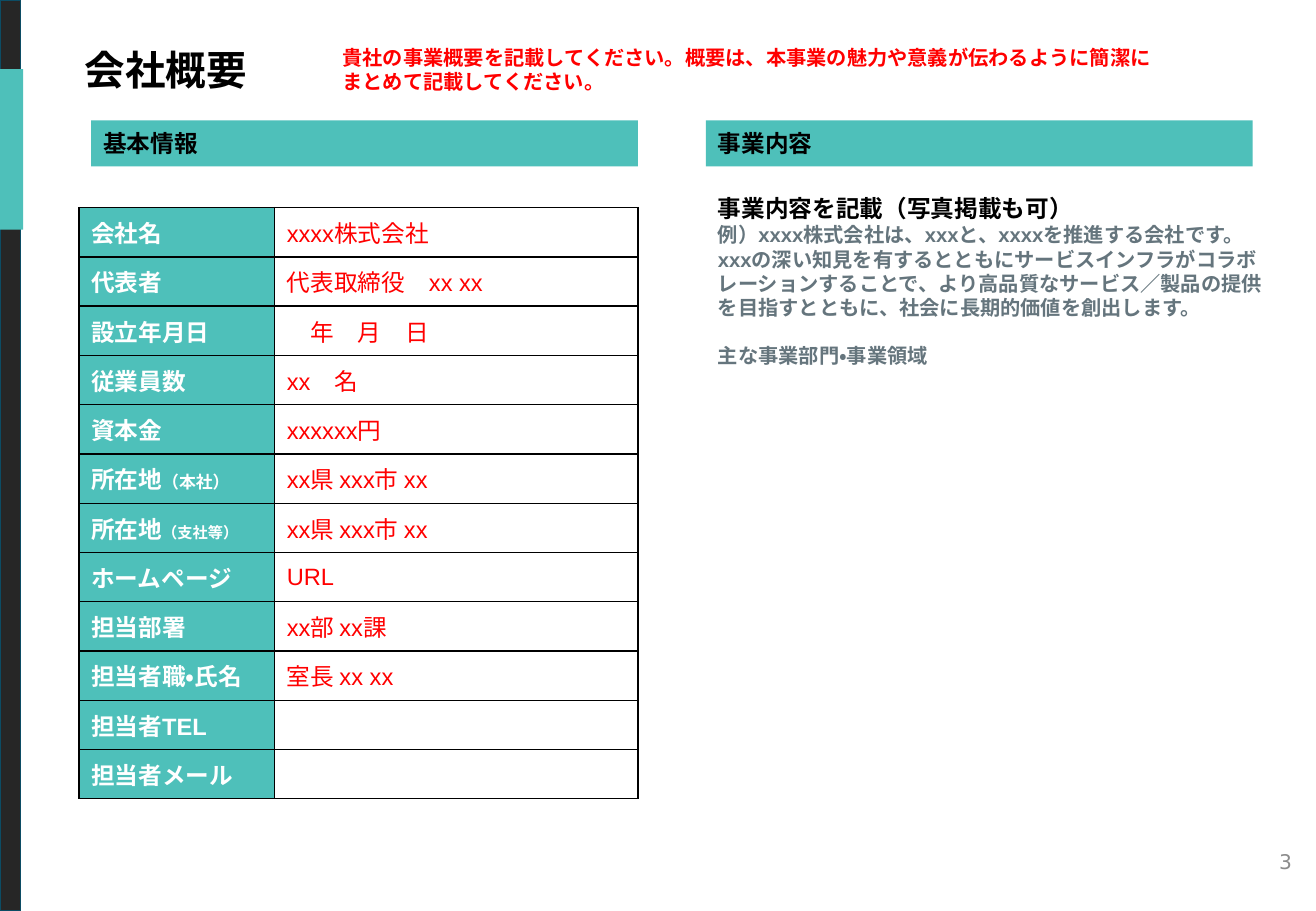
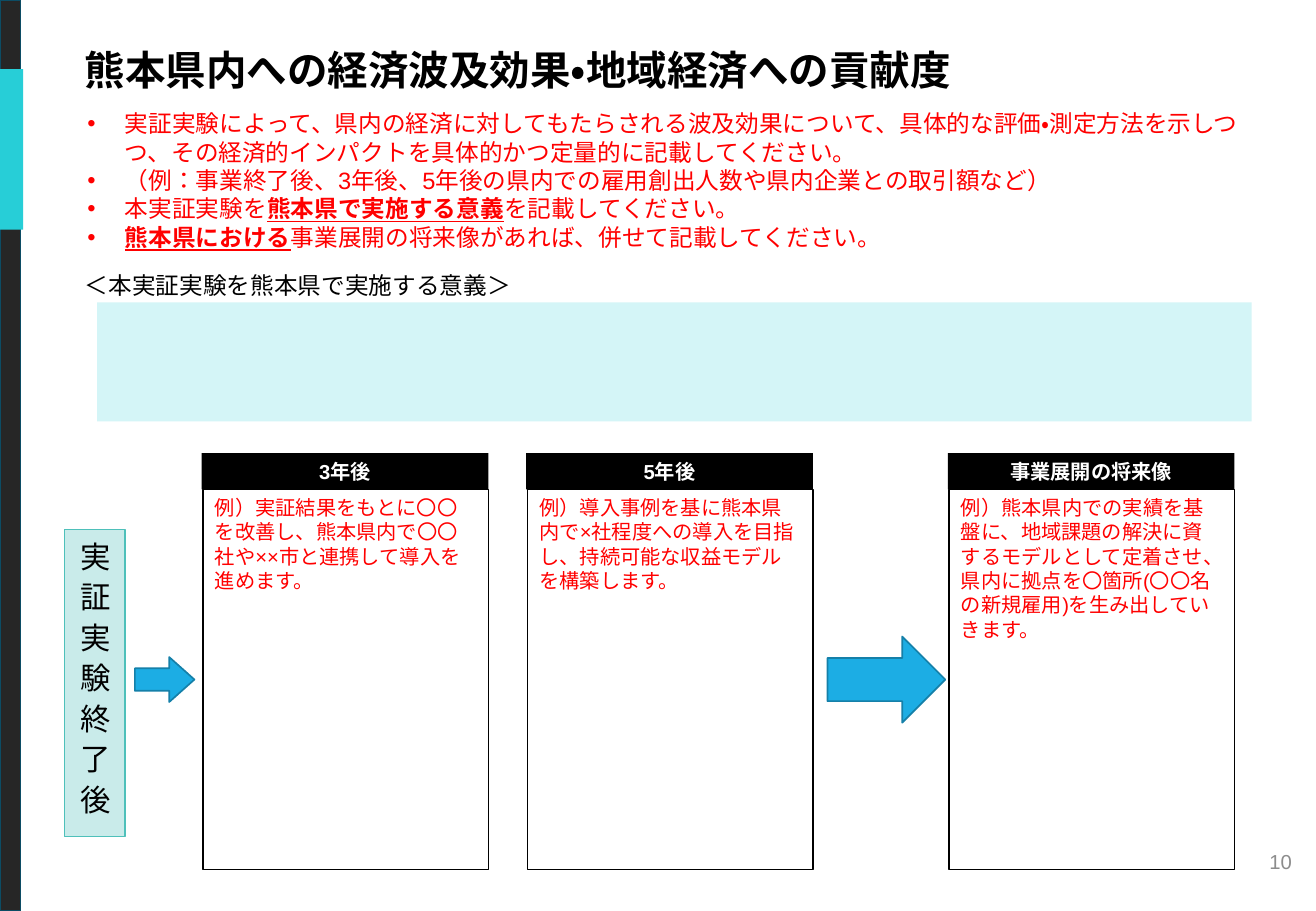
from lxml.etree import SubElement
from pptx import Presentation
from pptx.dml.color import RGBColor
from pptx.enum.lang import MSO_LANGUAGE_ID as Language
from pptx.enum.shapes import MSO_SHAPE as Shape
from pptx.enum.text import MSO_ANCHOR as Anchor, PP_ALIGN as Align
from pptx.oxml.ns import qn
from pptx.util import Inches, Pt

COLORS = {
    "black": "000000", "white": "FFFFFF", "red": "FF0000", "teal": "4EC0BA",
    "cyan": "27CED7", "pale": "D4F5F7", "band": "262626", "band_line": "0C4C64",
    "slate": "65757D", "number": "8C8C8C", "arrow": "1CADE4", "arrow_line": "1580A9",
}
FONT = "Arial"


def add_box(slide, kind, bounds, fill=None, line=None, line_width=1):
    shape = slide.shapes.add_shape(kind, *map(Inches, bounds))
    shape.shadow.inherit = False
    if fill:
        shape.fill.solid()
        shape.fill.fore_color.rgb = RGBColor.from_string(COLORS[fill])
    else:
        shape.fill.background()
    if line:
        shape.line.color.rgb = RGBColor.from_string(COLORS[line])
        shape.line.width = Pt(line_width)
    else:
        shape.line.fill.background()
    return shape


def write(frame, paragraphs, size, color, bold=False, align=Align.LEFT, anchor=Anchor.TOP, font=FONT):
    frame.word_wrap = True
    frame.vertical_anchor = anchor
    for index, runs in enumerate(paragraphs):
        paragraph = frame.paragraphs[0] if index == 0 else frame.add_paragraph()
        paragraph.alignment = align
        for text, changes in runs:
            style = {"size": size, "color": color, "bold": bold, "underline": False} | changes
            run = paragraph.add_run()
            run.text = text
            run.font.name = font
            run.font.language_id = Language.JAPANESE
            run.font.size = Pt(style["size"])
            run.font.bold = style["bold"]
            run.font.underline = style["underline"]
            run.font.color.rgb = RGBColor.from_string(COLORS[style["color"]])


presentation = Presentation()
presentation.slide_width = Inches(10.83)
presentation.slide_height = Inches(7.5)

slides = []
for title, number, tab_color, number_font in [
    ("会社概要", "3", "teal", "DejaVu Sans"),
    ("熊本県内への経済波及効果・地域経済への貢献度", "10", "cyan", FONT),
]:
    slide = presentation.slides.add_slide(presentation.slide_layouts[6])
    add_box(slide, Shape.RECTANGLE, (0, 0, 0.17, 7.5), "band", "band_line")
    add_box(slide, Shape.RECTANGLE, (0, 0.57, 0.19, 1.32), tab_color)
    title_box = slide.shapes.add_textbox(Inches(0.6), Inches(0.32), Inches(9.95), Inches(0.5))
    write(title_box.text_frame, [[(title, {})]], 24, "black", True)
    number_box = slide.shapes.add_textbox(Inches(8.29), Inches(6.89), Inches(2.44), Inches(0.4))
    write(number_box.text_frame, [[(number, {})]], 12, "number", align=Align.RIGHT,
          anchor=Anchor.MIDDLE, font=number_font)
    slides.append(slide)
company_slide, impact_slide = slides

for left, heading in [(0.75, "基本情報"), (5.81, "事業内容")]:
    heading_bar = add_box(company_slide, Shape.RECTANGLE, (left, 0.99, 4.5, 0.38), "teal")
    write(heading_bar.text_frame, [[(heading, {})]], 14, "black", True, anchor=Anchor.MIDDLE)

guidance = company_slide.shapes.add_textbox(Inches(2.72), Inches(0.32), Inches(7.59), Inches(0.5))
write(guidance.text_frame, [
    [("貴社の事業概要を記載してください。概要は、本事業の魅力や意義が伝わるように簡潔に", {})],
    [("まとめて記載してください。", {})],
], 12, "red", True)

business = company_slide.shapes.add_textbox(Inches(5.81), Inches(1.55), Inches(4.76), Inches(1.55))
write(business.text_frame, [
    [("事業内容を記載（写真掲載も可）", {"size": 14, "color": "black"})],
    [("例）xxxx株式会社は、xxxと、xxxxを推進する会社です。", {})],
    [("xxxの深い知見を有するとともにサービスインフラがコラボレーションすることで、"
      "より高品質なサービス／製品の提供を目指すとともに、社会に長期的価値を創出します。", {})],
    [("主な事業部門・事業領域", {})],
], 12, "slate", True)
business.text_frame.paragraphs[-1].space_before = Pt(14.2)

company_rows = [
    ("会社名", "", 14, "xxxx株式会社"),
    ("代表者", "", 14, "代表取締役　xx xx"),
    ("設立年月日", "", 14, "　年　月　日"),
    ("従業員数", "", 14, "xx　名"),
    ("資本金", "", 14, "xxxxxx円"),
    ("所在地", "（本社）", 10, "xx県 xxx市 xx"),
    ("所在地", "（支社等）", 9, "xx県 xxx市 xx"),
    ("ホームページ", "", 14, "URL"),
    ("担当部署", "", 14, "xx部 xx課"),
    ("担当者職・氏名", "", 14, "室長 xx xx"),
    ("担当者TEL", "", 14, ""),
    ("担当者メール", "", 14, ""),
]
table = company_slide.shapes.add_table(
    len(company_rows), 2, Inches(0.65), Inches(1.71), Inches(4.6), Inches(4.87)).table
table.first_row = False
table.horz_banding = False
table.columns[0].width = Inches(1.61)
table.columns[1].width = Inches(2.99)
for row, (label, note, note_size, value) in enumerate(company_rows):
    label_runs = [(label, {})] + ([(note, {"size": note_size})] if note else [])
    value_runs = [(value, {})] if value else []
    for column, (runs, color) in enumerate([(label_runs, "white"), (value_runs, "red")]):
        cell = table.cell(row, column)
        write(cell.text_frame, [runs], 14, color, column == 0)
        cell.vertical_anchor = Anchor.MIDDLE
        properties = cell._tc.get_or_add_tcPr()
        for side in ("a:lnL", "a:lnR", "a:lnT", "a:lnB"):
            border = SubElement(properties, qn(side), w=str(Pt(1)))
            SubElement(SubElement(border, qn("a:solidFill")), qn("a:srgbClr"), val=COLORS["black"])
        if column == 0:
            cell.fill.solid()
            cell.fill.fore_color.rgb = RGBColor.from_string(COLORS["teal"])
        else:
            cell.fill.background()

emphasis = {"bold": True, "underline": True}
instructions = impact_slide.shapes.add_textbox(Inches(0.62), Inches(0.85), Inches(9.73), Inches(1.51))
write(instructions.text_frame, [
    [("実証実験によって、県内の経済に対してもたらされる波及効果について、具体的な評価・測定方法を示しつつ、"
      "その経済的インパクトを具体的かつ定量的に記載してください。", {})],
    [("（例：事業終了後、3年後、5年後の県内での雇用創出人数や県内企業との取引額など）", {})],
    [("本実証実験を", {}), ("熊本県で実施する意義", emphasis), ("を記載してください。", {})],
    [("熊本県における", emphasis), ("事業展開の将来像があれば、併せて記載してください。", {})],
], 14, "red")
for paragraph in instructions.text_frame.paragraphs:
    properties = paragraph._p.get_or_add_pPr()
    properties.set("marL", str(Inches(0.31)))
    properties.set("indent", str(Inches(-0.31)))
    SubElement(properties, qn("a:buFont"), typeface=FONT)
    SubElement(properties, qn("a:buChar"), char="•")

significance = impact_slide.shapes.add_textbox(Inches(0.6), Inches(2.18), Inches(4.67), Inches(0.34))
write(significance.text_frame, [[("＜本実証実験を熊本県で実施する意義＞", {})]], 14, "black")
add_box(impact_slide, Shape.RECTANGLE, (0.8, 2.49, 9.5, 0.98), "pale")

for left, heading, example in [
    (1.66, "3年後", "例）実証結果をもとに〇〇を改善し、熊本県内で〇〇社や××市と連携して導入を進めます。"),
    (4.33, "5年後", "例）導入事例を基に熊本県内で×社程度への導入を目指し、持続可能な収益モデルを構築します。"),
    (7.8, "事業展開の将来像", "例）熊本県内での実績を基盤に、地域課題の解決に資するモデルとして定着させ、"
     "県内に拠点を〇箇所(〇〇名の新規雇用)を生み出していきます。"),
]:
    stage_body = add_box(impact_slide, Shape.RECTANGLE, (left + 0.01, 4.03, 2.35, 3.13), line="black")
    write(stage_body.text_frame, [[(example, {})]], 12, "red")
    stage_heading = add_box(impact_slide, Shape.RECTANGLE, (left, 3.73, 2.36, 0.3), "black")
    write(stage_heading.text_frame, [[(heading, {})]], 12, "white", True, Align.CENTER, Anchor.MIDDLE)

start = add_box(impact_slide, Shape.RECTANGLE, (0.53, 4.36, 0.5, 2.53), "teal", "teal", 0.75)
fill_color = start._element.spPr.find(qn("a:solidFill")).find(qn("a:srgbClr"))
SubElement(fill_color, qn("a:alpha"), val="30000")
write(start.text_frame, [[("実証実験終了後", {})]], 18, "black", align=Align.CENTER, anchor=Anchor.MIDDLE)
start.text_frame._txBody.bodyPr.set("vert", "eaVert")
start.text_frame.paragraphs[0].runs[0]._r.get_or_add_rPr().set("spc", "600")

for bounds, head_ratio in [((6.81, 5.24, 0.97, 0.71), 0.5), ((1.11, 5.41, 0.49, 0.37), 0.56)]:
    arrow = add_box(impact_slide, Shape.RIGHT_ARROW, bounds, "arrow", "arrow_line")
    arrow.adjustments[1] = head_ratio

presentation.save("out.pptx")
